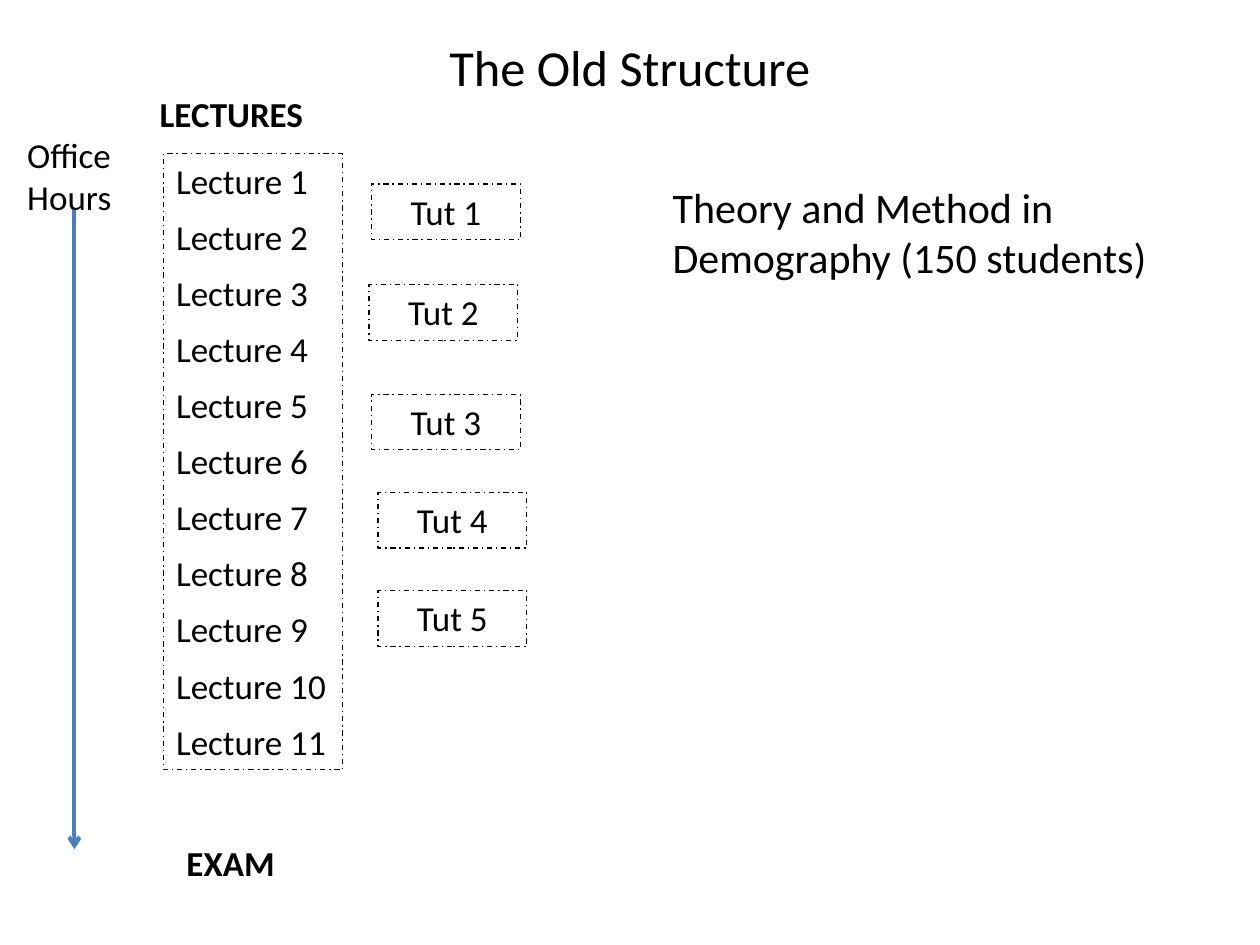
from dataclasses import dataclass

from lxml import etree
from pptx import Presentation
from pptx.dml.color import RGBColor
from pptx.enum.dml import MSO_LINE
from pptx.enum.shapes import MSO_CONNECTOR, MSO_SHAPE
from pptx.enum.text import MSO_ANCHOR, PP_ALIGN
from pptx.oxml.ns import qn
from pptx.util import Cm, Pt

RECT = MSO_SHAPE.RECTANGLE
STRAIGHT = MSO_CONNECTOR.STRAIGHT
DASH = MSO_LINE.DASH_DOT
LEFT, CENTER = PP_ALIGN.LEFT, PP_ALIGN.CENTER
TOP, MIDDLE = MSO_ANCHOR.TOP, MSO_ANCHOR.MIDDLE


@dataclass(frozen=True)
class Theme:
    font: str = "Calibri"
    ink: RGBColor = RGBColor(0x00, 0x00, 0x00)
    blue: RGBColor = RGBColor(0x4B, 0x7E, 0xBC)
    title: float = 28.8
    course: float = 24
    body: float = 20
    gap: float = 8
    thin: float = 0.75
    thick: float = 2.25


THEME = Theme()

# Places are left, top, width, height in cm.
TITLE = ("The Old Structure", (1.27, 0.76, 22.86, 1.17))
COURSE = ("Theory and Method in Demography (150 students)",
          (13.31, 3.53, 10.21, 2.31))
OFFICE = ("Office Hours", (0.3, 2.57, 3, 1.96))
HEADS = [
    ("LECTURES", (2.97, 1.75, 3.4, 1.12)),
    ("EXAM", (3.51, 16.84, 3.4, 1.12)),
]
LECTURES = [f"Lecture {n}" for n in range(1, 12)]
LECTURE_BOX = (3.3, 3.1, 3.61, 12.42)
TUT_SPOTS = [(7.49, 3.71), (7.44, 5.74), (7.49, 7.95), (7.62, 9.93), (7.62, 11.91)]
TUT_SIZE = (3, 1.12)
ARROW = (1.5, 4.24, 1.5, 17.12)


def cms(place):
    return [Cm(n) for n in place]


def write(shape, text, size=THEME.body, align=LEFT, bold=False, gap=0, anchor=TOP):
    frame = shape.text_frame
    frame.word_wrap = True
    frame.vertical_anchor = anchor
    frame.text = text
    for para in frame.paragraphs:
        para.alignment = align
        para.space_after = Pt(gap)
        for run in para.runs:
            font = run.font
            font.name, font.size, font.bold = THEME.font, Pt(size), bold
            font.color.rgb = THEME.ink


def add_label(slide, text, place, **style):
    write(slide.shapes.add_textbox(*cms(place)), text, **style)


def add_box(slide, text, place, **style):
    """Add an unfilled rectangle with a dash-dot outline."""
    box = slide.shapes.add_shape(RECT, *cms(place))
    box.shadow.inherit = False
    box.fill.background()
    box.line.color.rgb = THEME.ink
    box.line.width = Pt(THEME.thin)
    box.line.dash_style = DASH
    write(box, text, **style)


def add_arrow(slide, ends):
    arrow = slide.shapes.add_connector(STRAIGHT, *cms(ends))
    arrow.line.color.rgb = THEME.blue
    arrow.line.width = Pt(THEME.thick)
    props = arrow.element.spPr
    etree.SubElement(props.find(qn("a:ln")), qn("a:tailEnd"), type="arrow")
    etree.SubElement(props, qn("a:effectLst"))


def main():
    deck = Presentation()
    deck.slide_width, deck.slide_height = Cm(25.4), Cm(19.05)
    slide = deck.slides.add_slide(deck.slide_layouts[6])

    add_label(slide, *TITLE, size=THEME.title, align=CENTER, anchor=MIDDLE)
    add_box(slide, "\n".join(LECTURES), LECTURE_BOX, gap=THEME.gap)
    add_label(slide, *OFFICE)
    for num, spot in enumerate(TUT_SPOTS, 1):
        add_box(slide, f"Tut {num}", spot + TUT_SIZE, align=CENTER)
    for text, place in HEADS:
        add_label(slide, text, place, bold=True)
    add_label(slide, *COURSE, size=THEME.course)
    add_arrow(slide, ARROW)

    deck.save("out.pptx")


if __name__ == "__main__":
    main()
